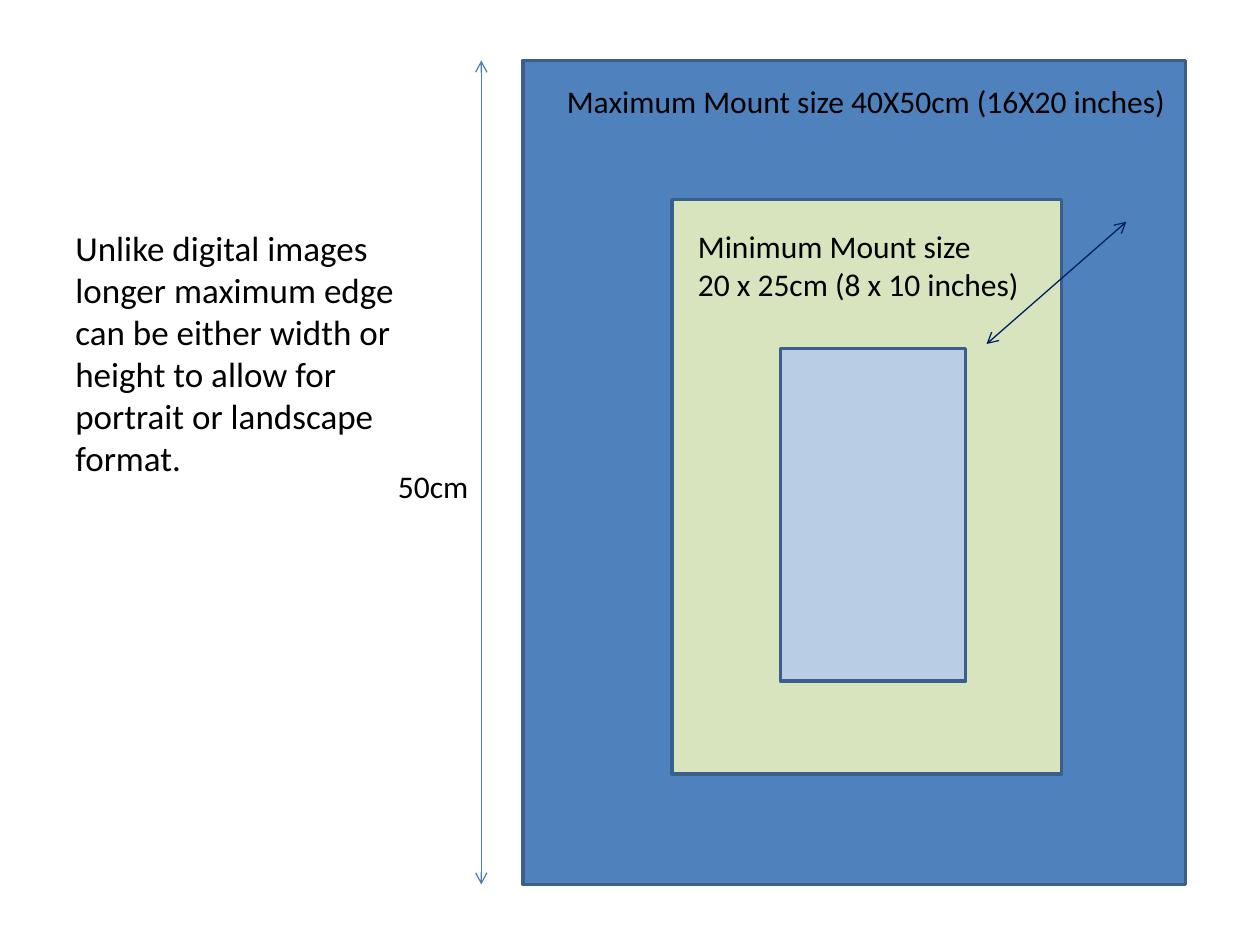
from lxml import etree
from pptx import Presentation, util as u
from pptx.dml.color import RGBColor
from pptx.enum import shapes, text
from pptx.oxml.ns import qn

COLS, ROWS = 100, 75
prs = Presentation()
prs.slide_width, prs.slide_height = u.Inches(10), u.Inches(7.5)
COL, ROW = prs.slide_width / COLS, prs.slide_height / ROWS


def rgb(value):
    return RGBColor.from_string(value)


def grid(x, y, w, h):
    return [round(n * unit) for n, unit in zip((x, y, w, h), (COL, ROW) * 2)]


def add_label(s, box, lines, size=18, wrap=False):
    tf = s.shapes.add_textbox(*grid(*box)).text_frame
    fit = text.MSO_AUTO_SIZE.NONE if wrap else text.MSO_AUTO_SIZE.SHAPE_TO_FIT_TEXT
    for name, value in {"word_wrap": wrap, "auto_size": fit}.items():
        setattr(tf, name, value)
    for i, line in enumerate(lines):
        p = tf.paragraphs[0] if i == 0 else tf.add_paragraph()
        p.text = line
        for r in p.runs:
            for name, value in {"name": "Calibri", "size": u.Pt(size)}.items():
                setattr(r.font, name, value)
            r.font.color.rgb = rgb("000000")


def add_mount(s, box, fill):
    sp = s.shapes.add_shape(shapes.MSO_SHAPE.RECTANGLE, *grid(*box))
    sp.shadow.inherit = False
    sp.fill.solid()
    sp.fill.fore_color.rgb = rgb(fill)
    sp.line.color.rgb = rgb("3A5F8C")
    sp.line.width = u.Pt(2)


def add_arrow(s, start, end, color):
    sp = s.shapes.add_connector(shapes.MSO_CONNECTOR.STRAIGHT, *grid(*start, *end))
    sp.line.color.rgb = rgb(color)
    sp.line.width = u.Pt(0.75)
    for tag in ("a:headEnd", "a:tailEnd"):
        etree.SubElement(sp.line._get_or_add_ln(), qn(tag), type="arrow")
    etree.SubElement(sp._element.spPr, qn("a:effectLst"))


def add_note(s, box):
    note = ("Unlike digital images \vlonger maximum edge can be either width "
            "or height to allow for portrait or landscape format.")
    add_label(s, box, [note], size=20, wrap=True)


def add_mounts(s, box):
    x, y, w, h = box
    add_mount(s, box, "4F81BD")
    add_mount(s, (x + 11.85, y + 11.05, 30.9, 45.6), "D7E4BD")
    add_mount(s, (x + 20.45, y + 22.85, 14.7, 26.4), "B9CDE5")
    add_label(s, (x + 12.9, y + 12.7, 27.8, 7.1),
              ["Minimum Mount size", "20 x 25cm (8 x 10 inches)"])
    add_label(s, (x + 2.5, y + 1.2, 50.1, 4),
              ["Maximum Mount size 40X50cm (16X20 inches)"])
    add_arrow(s, (x + 36.8, y + 22.5), (x + 47.9, y + 12.8), "002060")


def add_height_scale(s, box):
    x, y, w, h = box
    add_arrow(s, (x + w, y), (x + w, y + h), "4B7EBC")
    add_label(s, (x, y + 31.8, 7.7, 4), ["50cm"])


def main():
    s = prs.slides.add_slide(prs.slide_layouts[6])
    add_note(s, (5, 17.5, 29.3, 49.5))
    add_mounts(s, (41.5, 4.8, 52.6, 65.4))
    add_height_scale(s, (30.6, 4.8, 7.6, 65.4))
    prs.save("out.pptx")


if __name__ == "__main__":
    main()
